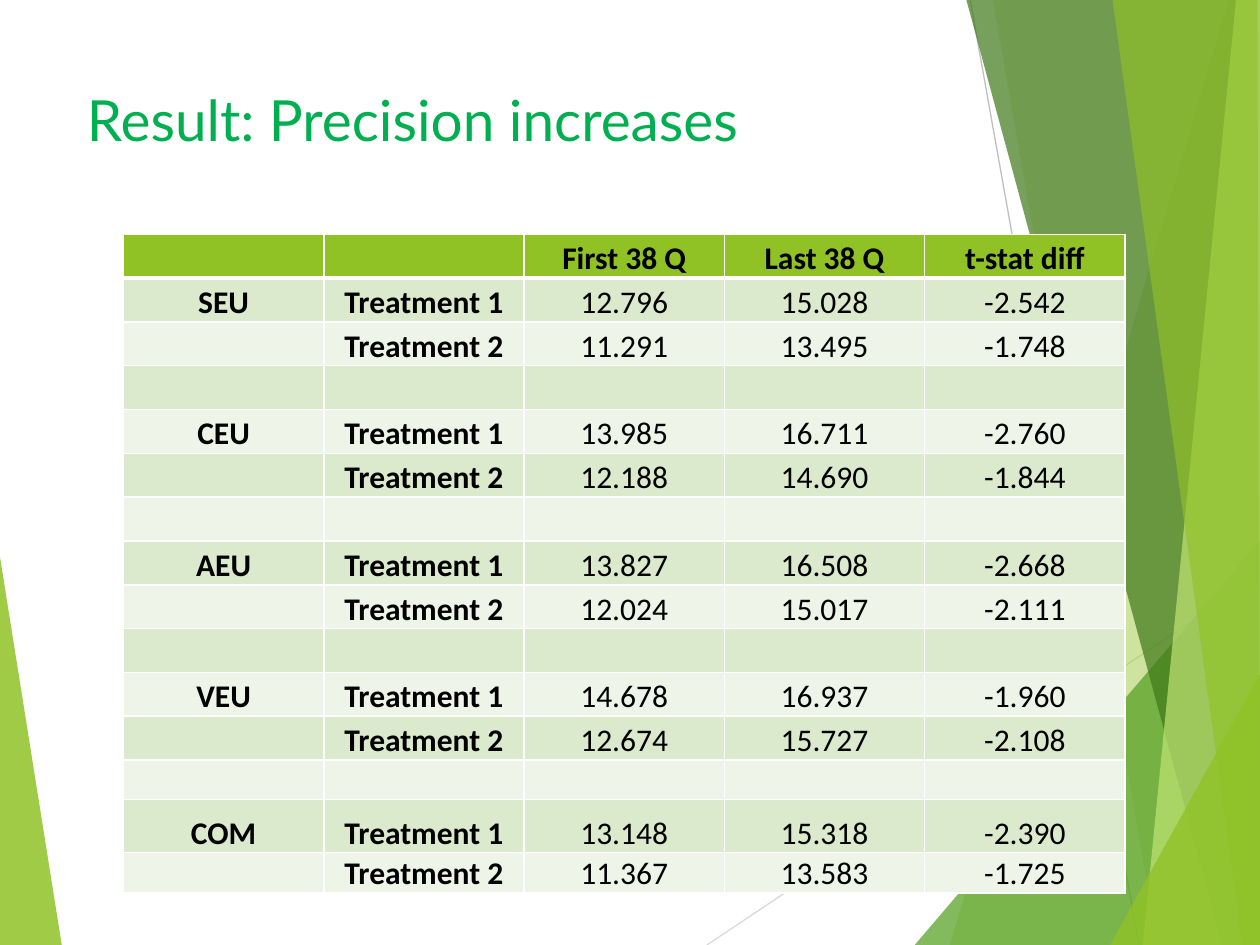
from lxml.etree import SubElement
from pptx import Presentation
from pptx.dml.color import RGBColor
from pptx.enum.shapes import MSO_CONNECTOR as Connector
from pptx.enum.text import MSO_ANCHOR as Anchor, PP_ALIGN as Align
from pptx.oxml import parse_xml
from pptx.oxml.ns import nsdecls, qn
from pptx.util import Inches, Pt

COLORS = {
    "lime": "90C226", "green": "54A021", "forest": "3F7819", "pale": "C0E474",
    "silver": "D9D9D9", "grey": "BFBFBF", "title": "00B050", "text": "000000",
    "band": "DBE9CD", "light band": "EEF4E8", "border": "FFFFFF",
}
COLORS_RGB = {name: RGBColor.from_string(value) for name, value in COLORS.items()}

presentation = Presentation()
presentation.slide_width, presentation.slide_height = Inches(10), Inches(7.5)
COLUMN = presentation.slide_width // 1000
ROW = presentation.slide_height // 750
slide = presentation.slides.add_slide(presentation.slide_layouts[5])
shapes = slide.shapes


def add_facet(color, opacity, points):
    """Draw a translucent polygon from (column, row) grid points."""
    builder = shapes.build_freeform(*points[0], scale=(COLUMN, ROW))
    builder.add_line_segments(points[1:], close=True)
    facet = builder.convert_to_shape()
    facet.shadow.inherit = False
    facet.line.fill.background()
    facet.fill.solid()
    facet.fill.fore_color.rgb = COLORS_RGB[color]
    for fill_color in facet.fill._xPr.iter(qn("a:srgbClr")):
        SubElement(fill_color, qn("a:alpha"), val=str(opacity * 1000))


def add_borders(cell, bottom_width):
    properties = cell._tc.get_or_add_tcPr()
    for side, width in {"L": 1, "R": 1, "T": 1, "B": bottom_width}.items():
        properties.append(parse_xml(
            f'<a:ln{side} {nsdecls("a")} w="{Pt(width)}"><a:solidFill>'
            f'<a:srgbClr val="{COLORS["border"]}"/></a:solidFill></a:ln{side}>'))


# Background facets
add_facet("lime", 85, [(0, 442), (49, 750), (0, 750)])
for color, start, end in [("silver", (561, 750), (1000, 457)),
                          ("grey", (770, 0), (904, 750))]:
    line = shapes.add_connector(Connector.STRAIGHT, start[0] * COLUMN, start[1] * ROW,
                                end[0] * COLUMN, end[1] * ROW)
    line.line.color.rgb = COLORS_RGB[color]
    line.line.width = Pt(0.75)
    SubElement(line._element.spPr, qn("a:effectLst"))

for color, opacity, points in [
    ("lime", 30, [(975, 0), (754, 750), (1000, 750), (1000, 0)]),
    ("lime", 20, [(788, 0), (919, 750), (1000, 750), (1000, 0)]),
    ("green", 72, [(726, 750), (1000, 429), (1000, 750)]),
    ("forest", 70, [(767, 0), (970, 750), (1000, 750), (1000, 0)]),
    ("pale", 70, [(981, 0), (907, 750), (1000, 750), (1000, 0)]),
    ("lime", 65, [(883, 0), (986, 750), (1000, 750), (998, 0)]),
    ("lime", 80, [(881, 750), (1000, 535), (1000, 750)]),
]:
    add_facet(color, opacity, points)

# Title
title = shapes.title
title.left, title.top = 59 * COLUMN, 60 * ROW
title.width, title.height = 899 * COLUMN, 69 * ROW
title.text_frame.text = "Result: Precision increases"
title.text_frame.vertical_anchor = Anchor.MIDDLE
paragraph = title.text_frame.paragraphs[0]
paragraph.alignment = Align.LEFT
title_format = {"name": "Lato", "size": Pt(32.4), "bold": False}
for name, value in title_format.items():
    setattr(paragraph.runs[0].font, name, value)
paragraph.runs[0].font.color.rgb = COLORS_RGB["title"]

# Precision table: two treatments per model, with an empty row between models
RESULTS = {
    "SEU": [("12.796", "15.028", "-2.542"), ("11.291", "13.495", "-1.748")],
    "CEU": [("13.985", "16.711", "-2.760"), ("12.188", "14.690", "-1.844")],
    "AEU": [("13.827", "16.508", "-2.668"), ("12.024", "15.017", "-2.111")],
    "VEU": [("14.678", "16.937", "-1.960"), ("12.674", "15.727", "-2.108")],
    "COM": [("13.148", "15.318", "-2.390"), ("11.367", "13.583", "-1.725")],
}
rows = [("", "", "First 38 Q", "Last 38 Q", "t-stat diff")]
for model, (first, second) in RESULTS.items():
    rows += [(model, "Treatment 1", *first), ("", "Treatment 2", *second), ("",) * 5]
rows.pop()
row_heights = [34.8] * 12 + [31, 42, 32]

table = shapes.add_table(len(rows), 5, 98 * COLUMN, 186 * ROW,
                         795 * COLUMN, int(sum(row_heights) * ROW)).table
table.first_row = table.horz_banding = False
for column in table.columns:
    column.width = 159 * COLUMN
for row, height in zip(table.rows, row_heights):
    row.height = int(height * ROW)

cell_format = {"margin_left": Inches(0.01), "margin_right": Inches(0.01),
               "margin_top": Inches(0.01), "margin_bottom": 0,
               "vertical_anchor": Anchor.BOTTOM}
for row_index, values in enumerate(rows):
    is_header = row_index == 0
    fill = "lime" if is_header else "band" if row_index % 2 else "light band"
    for column_index, value in enumerate(values):
        cell = table.cell(row_index, column_index)
        for name, setting in cell_format.items():
            setattr(cell, name, setting)
        add_borders(cell, 3 if is_header else 1)
        cell.fill.solid()
        cell.fill.fore_color.rgb = COLORS_RGB[fill]
        if not value:
            continue
        paragraph = cell.text_frame.paragraphs[0]
        paragraph.alignment = Align.CENTER
        run = paragraph.add_run()
        run.text = value
        font_format = {"name": "Calibri", "size": Pt(18),
                       "bold": is_header or column_index < 2}
        for name, setting in font_format.items():
            setattr(run.font, name, setting)
        run.font.color.rgb = COLORS_RGB["text"]

presentation.save("out.pptx")
